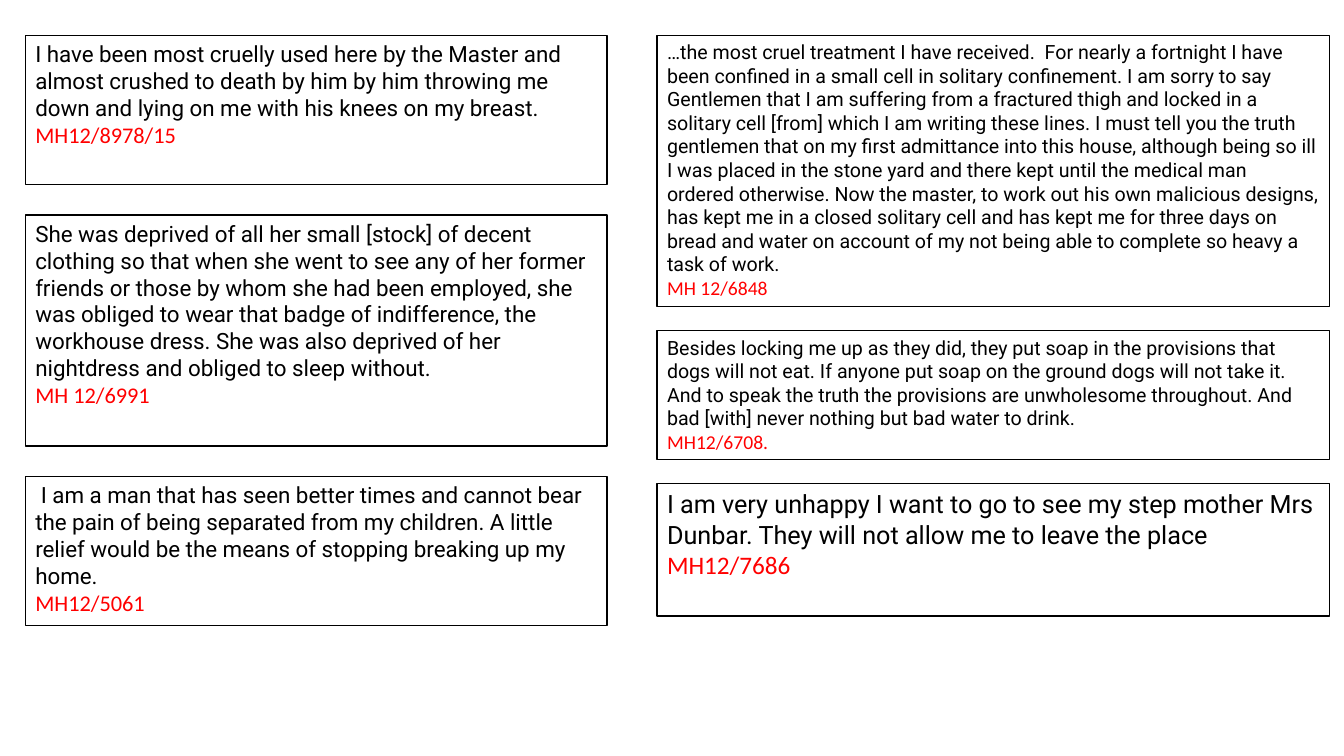
import pptx
import pptx.dml.color
import pptx.enum.shapes
import pptx.enum.text
import pptx.util
from pptx.util import Cm

BLACK = "000000"
WHITE = "FFFFFF"
RED = "FF0000"
TOP = 0.89

COLUMNS = [
    {
        "left": 0.64, "width": 14.66, "gap": 0.77,
        "quotes": [
            (3.76, 16,
             "I have been most cruelly used here by the Master and almost crushed to death by him "
             "by him throwing me down and lying on me with his knees on my breast.",
             "MH12/8978/15"),
            (5.82, 16,
             "She was deprived of all her small [stock] of decent clothing so that when she went to "
             "see any of her former friends or those by whom she had been employed, she was obliged "
             "to wear that badge of indifference, the workhouse dress. She was also deprived of her "
             "nightdress and obliged to sleep without.",
             "MH 12/6991"),
            (3.76, 16,
             " I am a man that has seen better times and cannot bear the pain of being separated "
             "from my children. A little relief would be the means of stopping breaking up my home.",
             "MH12/5061"),
        ],
    },
    {
        "left": 16.56, "width": 16.94, "gap": 0.61,
        "quotes": [
            (6.83, 14,
             "…the most cruel treatment I have received.  For nearly a fortnight I have been "
             "confined in a small cell in solitary confinement. I am sorry to say Gentlemen that I "
             "am suffering from a fractured thigh and locked in a solitary cell [from] which I am "
             "writing these lines. I must tell you the truth gentlemen that on my first admittance "
             "into this house, although being so ill I was placed in the stone yard and there kept "
             "until the medical man ordered otherwise. Now the master, to work out his own malicious "
             "designs, has kept me in a closed solitary cell and has kept me for three days on bread "
             "and water on account of my not being able to complete so heavy a task of work.",
             "MH 12/6848"),
            (3.25, 14,
             "Besides locking me up as they did, they put soap in the provisions that dogs will not "
             "eat. If anyone put soap on the ground dogs will not take it. And to speak the truth "
             "the provisions are unwholesome throughout. And bad [with] never nothing but bad water "
             "to drink.",
             "MH12/6708."),
            (3.33, 18,
             "I am very unhappy I want to go to see my step mother Mrs Dunbar. They will not allow "
             "me to leave the place",
             "MH12/7686"),
        ],
    },
]


def rgb(value):
    return pptx.dml.color.RGBColor.from_string(value)


def write(paragraph, text, *, size, font, color):
    paragraph.alignment = pptx.enum.text.PP_ALIGN.LEFT
    run = paragraph.add_run()
    run.text = text
    run.font.size = pptx.util.Pt(size)
    run.font.name = font
    run.font.color.rgb = rgb(color)


def add_quote(slide, left, top, width, height, size, quote, reference):
    shape = slide.shapes.add_shape(
        pptx.enum.shapes.MSO_SHAPE.RECTANGLE, Cm(left), Cm(top), Cm(width), Cm(height))
    shape.shadow.inherit = False
    shape.fill.solid()
    shape.fill.fore_color.rgb = rgb(WHITE)
    shape.line.color.rgb = rgb(BLACK)
    shape.line.width = pptx.util.Pt(1)
    frame = shape.text_frame
    frame.word_wrap = True
    frame.vertical_anchor = pptx.enum.text.MSO_ANCHOR.TOP
    write(frame.paragraphs[0], quote, size=size, font="Roboto", color=BLACK)
    write(frame.add_paragraph(), reference, size=size, font="Calibri", color=RED)


def main():
    presentation = pptx.Presentation()
    presentation.slide_width = Cm(33.87)
    presentation.slide_height = Cm(19.05)
    slide = presentation.slides.add_slide(presentation.slide_layouts[6])
    for column in COLUMNS:
        top = TOP
        for height, size, quote, reference in column["quotes"]:
            add_quote(slide, column["left"], top, column["width"], height, size, quote, reference)
            top += height + column["gap"]
    presentation.save("out.pptx")


if __name__ == "__main__":
    main()
